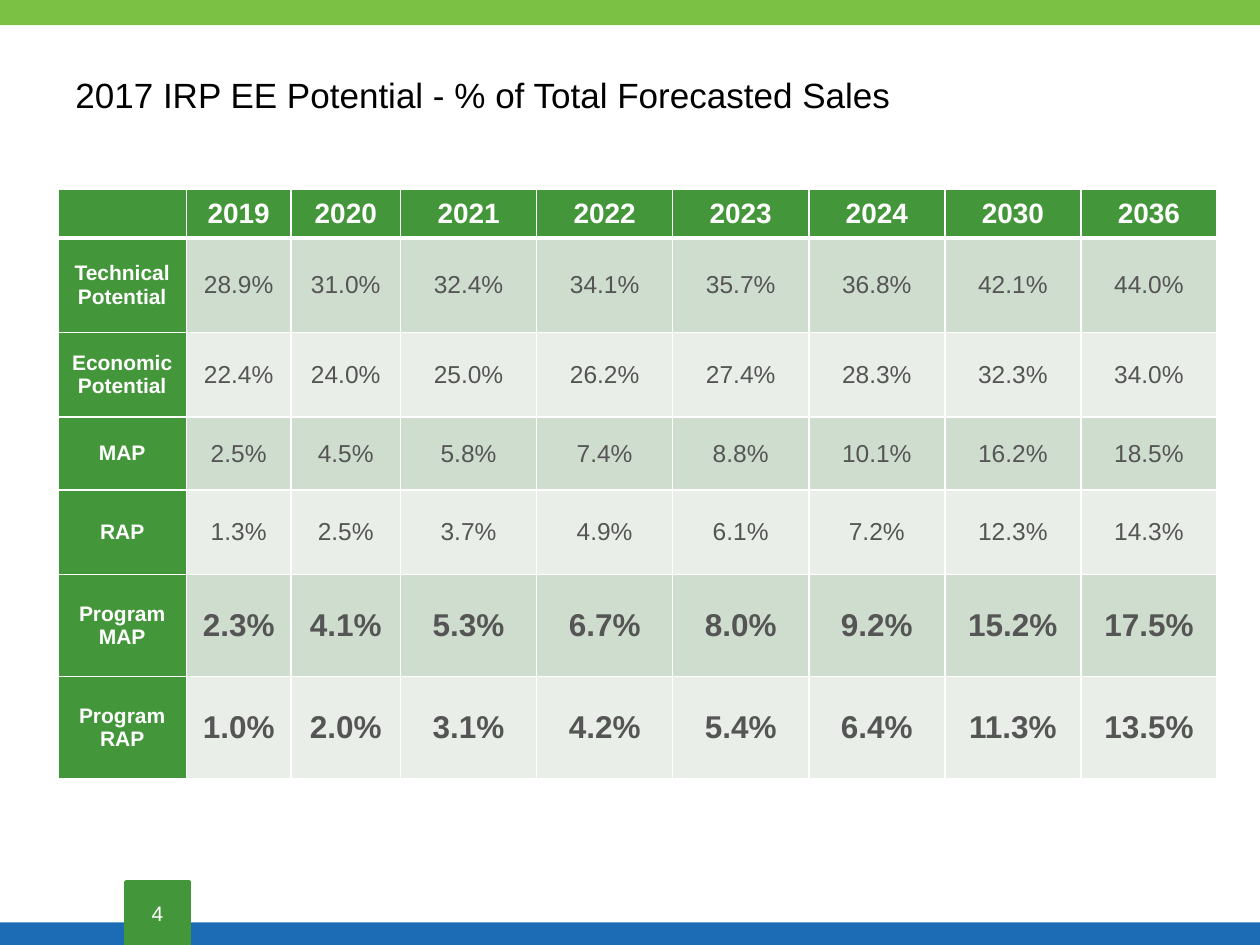
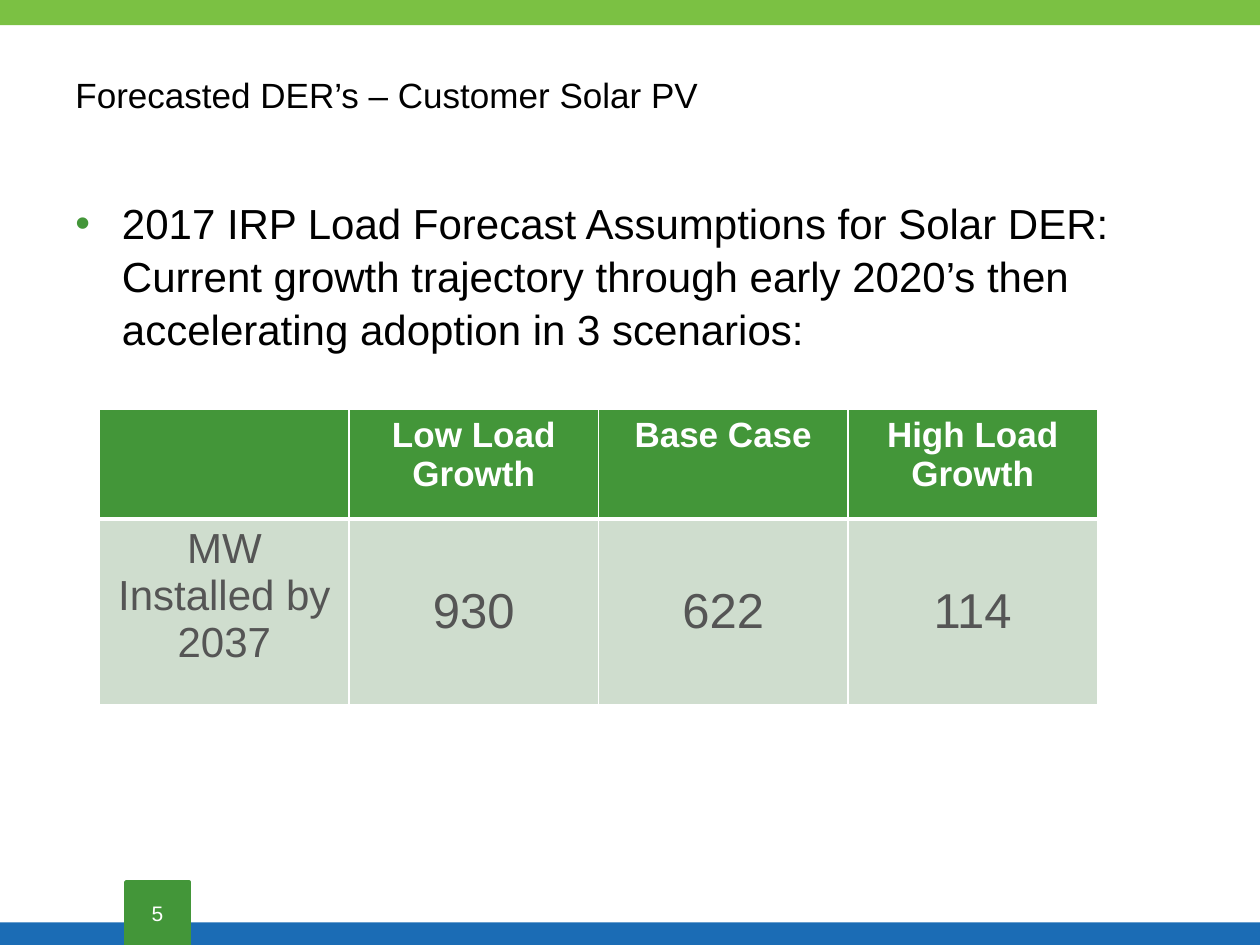
"""Builds two slides on energy efficiency potential and customer solar forecasts."""
from lxml import etree
from pptx import Presentation
from pptx.dml.color import RGBColor
from pptx.enum.shapes import MSO_SHAPE
from pptx.enum.text import MSO_ANCHOR, PP_ALIGN
from pptx.oxml.ns import qn
from pptx.util import Inches, Pt

RECTANGLE = MSO_SHAPE.RECTANGLE
LEFT, CENTER = PP_ALIGN.LEFT, PP_ALIGN.CENTER
TOP, MIDDLE = MSO_ANCHOR.TOP, MSO_ANCHOR.MIDDLE

WIDTH, HEIGHT = 10, 7.5
FONT = "Arial"
BLACK, WHITE, GREY = "000000", "FFFFFF", "555555"
LIME, BLUE, GREEN = "7BC143", "1B6CB5", "439639"
BANDS = ("CFDDCE", "E9EFE8")
THIN, HEAVY = 1, 3

HEADING = {"size": 16, "color": WHITE, "bold": True}
ROW_LABEL = {"size": 12, "color": WHITE, "bold": True}
VALUE = {"size": 14, "color": GREY}
PROGRAM_VALUE = {"size": 18, "color": GREY, "bold": True}
SCENARIO = {"size": 20, "color": WHITE, "bold": True}
SOLAR_LABEL = {"size": 24, "color": GREY}
SOLAR_VALUE = {"size": 28, "color": GREY}

TIGHT = {"margin_left": 0.04, "margin_right": 0.04, "margin_top": 0, "margin_bottom": 0}
ROOMY = {"margin_left": 0.1, "margin_right": 0.1, "margin_top": 0.05, "margin_bottom": 0.05}

POTENTIAL = {
    "title": "2017 IRP EE Potential - % of Total Forecasted Sales",
    "number": 4,
    "table": {
        "at": (0.46, 1.5),
        "columns": [1.02, 0.83, 0.87] + [1.08] * 6,
        "rows": [0.39, 0.75, 0.67, 0.58, 0.67, 0.81, 0.81],
        "margins": TIGHT,
        "anchors": (MIDDLE, MIDDLE, MIDDLE),
        "label_fill": GREEN,
        "content": [
            (HEADING, HEADING, "", "2019 2020 2021 2022 2023 2024 2030 2036".split()),
            (ROW_LABEL, VALUE, "Technical Potential",
             "28.9% 31.0% 32.4% 34.1% 35.7% 36.8% 42.1% 44.0%".split()),
            (ROW_LABEL, VALUE, "Economic Potential",
             "22.4% 24.0% 25.0% 26.2% 27.4% 28.3% 32.3% 34.0%".split()),
            (ROW_LABEL, VALUE, "MAP",
             "2.5% 4.5% 5.8% 7.4% 8.8% 10.1% 16.2% 18.5%".split()),
            (ROW_LABEL, VALUE, "RAP",
             "1.3% 2.5% 3.7% 4.9% 6.1% 7.2% 12.3% 14.3%".split()),
            (ROW_LABEL, PROGRAM_VALUE, "Program MAP",
             "2.3% 4.1% 5.3% 6.7% 8.0% 9.2% 15.2% 17.5%".split()),
            (ROW_LABEL, PROGRAM_VALUE, "Program RAP",
             "1.0% 2.0% 3.1% 4.2% 5.4% 6.4% 11.3% 13.5%".split()),
        ],
    },
}
SOLAR = {
    "title": "Forecasted DER’s – Customer Solar PV",
    "number": 5,
    "bullet": "2017 IRP Load Forecast Assumptions for Solar DER: Current growth trajectory "
              "through early 2020’s then accelerating adoption in 3 scenarios:",
    "table": {
        "at": (0.79, 3.25),
        "columns": [1.98] * 4,
        "rows": [0.87, 1.47],
        "margins": ROOMY,
        "anchors": (TOP, TOP, MIDDLE),
        "label_fill": BANDS[0],
        "content": [
            (SCENARIO, SCENARIO, "", ["Low Load Growth", "Base Case", "High Load Growth"]),
            (SOLAR_LABEL, SOLAR_VALUE, "MW Installed by 2037", ["930", "622", "114"]),
        ],
    },
}


def rgb(value):
    return RGBColor.from_string(value)


def set_attributes(target, values):
    for name, value in values.items():
        setattr(target, name, value)


def write(frame, text, style, paragraph_format):
    paragraph = frame.paragraphs[0]
    set_attributes(paragraph, paragraph_format)
    if text:
        run = paragraph.add_run()
        run.text = text
        set_attributes(run.font, {"name": FONT, "size": Pt(style["size"]),
                                  "bold": style.get("bold", False)})
        run.font.color.rgb = rgb(style["color"])
    return paragraph


def add_block(slide, box, color):
    shape = slide.shapes.add_shape(RECTANGLE, *map(Inches, box))
    shape.shadow.inherit = False
    shape.fill.solid()
    shape.fill.fore_color.rgb = rgb(color)
    shape.line.fill.background()
    return shape


def add_text(slide, box, text, style, paragraph_format):
    frame = slide.shapes.add_textbox(*map(Inches, box)).text_frame
    frame.word_wrap = True
    return write(frame, text, style, paragraph_format)


def add_frame(slide, title, number):
    add_block(slide, (0, 0, WIDTH, 0.2), LIME)
    add_block(slide, (0, 7.32, WIDTH, HEIGHT - 7.32), BLUE)
    badge = add_block(slide, (1, 7, 0.5, 0.5), GREEN)
    badge.line.color.rgb = rgb(GREEN)
    badge.line.width = Pt(2)
    badge.text_frame.vertical_anchor = MIDDLE
    write(badge.text_frame, str(number), {"size": 12, "color": WHITE}, {"alignment": CENTER})
    add_text(slide, (0.5, 0.5, 8.58, 0.63), title, {"size": 20, "color": BLACK},
             {"alignment": LEFT, "line_spacing": 1.1})


def add_bullet(slide, text):
    paragraph = add_text(slide, (0.5, 1.5, 8.5, 1.5), text, {"size": 24, "color": BLACK},
                         {"alignment": LEFT, "line_spacing": 1.05, "space_after": Pt(12)})
    properties = paragraph._p.get_or_add_pPr()
    properties.set("marL", str(Inches(0.37)))
    properties.set("indent", str(-Inches(0.37)))
    color = etree.SubElement(properties, qn("a:buClr"))
    etree.SubElement(color, qn("a:srgbClr"), val=GREEN)
    etree.SubElement(properties, qn("a:buFont"), typeface=FONT)
    etree.SubElement(properties, qn("a:buChar"), char="•")


def set_borders(cell, row):
    widths = {"L": THIN, "R": THIN, "T": HEAVY if row == 1 else THIN,
              "B": HEAVY if row == 0 else THIN}
    properties = cell._tc.get_or_add_tcPr()
    for index, (side, width) in enumerate(widths.items()):
        line = etree.Element(qn(f"a:ln{side}"), w=str(Pt(width)))
        fill = etree.SubElement(line, qn("a:solidFill"))
        etree.SubElement(fill, qn("a:srgbClr"), val=WHITE)
        properties.insert(index, line)


def add_grid(slide, grid):
    columns, rows = grid["columns"], grid["rows"]
    box = (*grid["at"], sum(columns), sum(rows))
    table = slide.shapes.add_table(len(rows), len(columns), *map(Inches, box)).table
    for column, width in zip(table.columns, columns):
        column.width = Inches(width)
    for row, height in zip(table.rows, rows):
        row.height = Inches(height)
    heading_anchor, label_anchor, value_anchor = grid["anchors"]
    margins = {side: Inches(margin) for side, margin in grid["margins"].items()}
    for row, (label_style, value_style, label, values) in enumerate(grid["content"]):
        for column, text in enumerate([label, *values]):
            cell = table.cell(row, column)
            if row == 0:
                color, anchor = GREEN, heading_anchor
            elif column == 0:
                color, anchor = grid["label_fill"], label_anchor
            else:
                color, anchor = BANDS[(row - 1) % 2], value_anchor
            set_attributes(cell, {**margins, "vertical_anchor": anchor})
            cell.fill.solid()
            cell.fill.fore_color.rgb = rgb(color)
            set_borders(cell, row)
            write(cell.text_frame, text, value_style if column else label_style,
                  {"alignment": CENTER})


def main():
    presentation = Presentation()
    set_attributes(presentation, {"slide_width": Inches(WIDTH), "slide_height": Inches(HEIGHT)})
    for content in (POTENTIAL, SOLAR):
        slide = presentation.slides.add_slide(presentation.slide_layouts[6])
        add_frame(slide, content["title"], content["number"])
        if "bullet" in content:
            add_bullet(slide, content["bullet"])
        add_grid(slide, content["table"])
    presentation.save("out.pptx")


if __name__ == "__main__":
    main()
